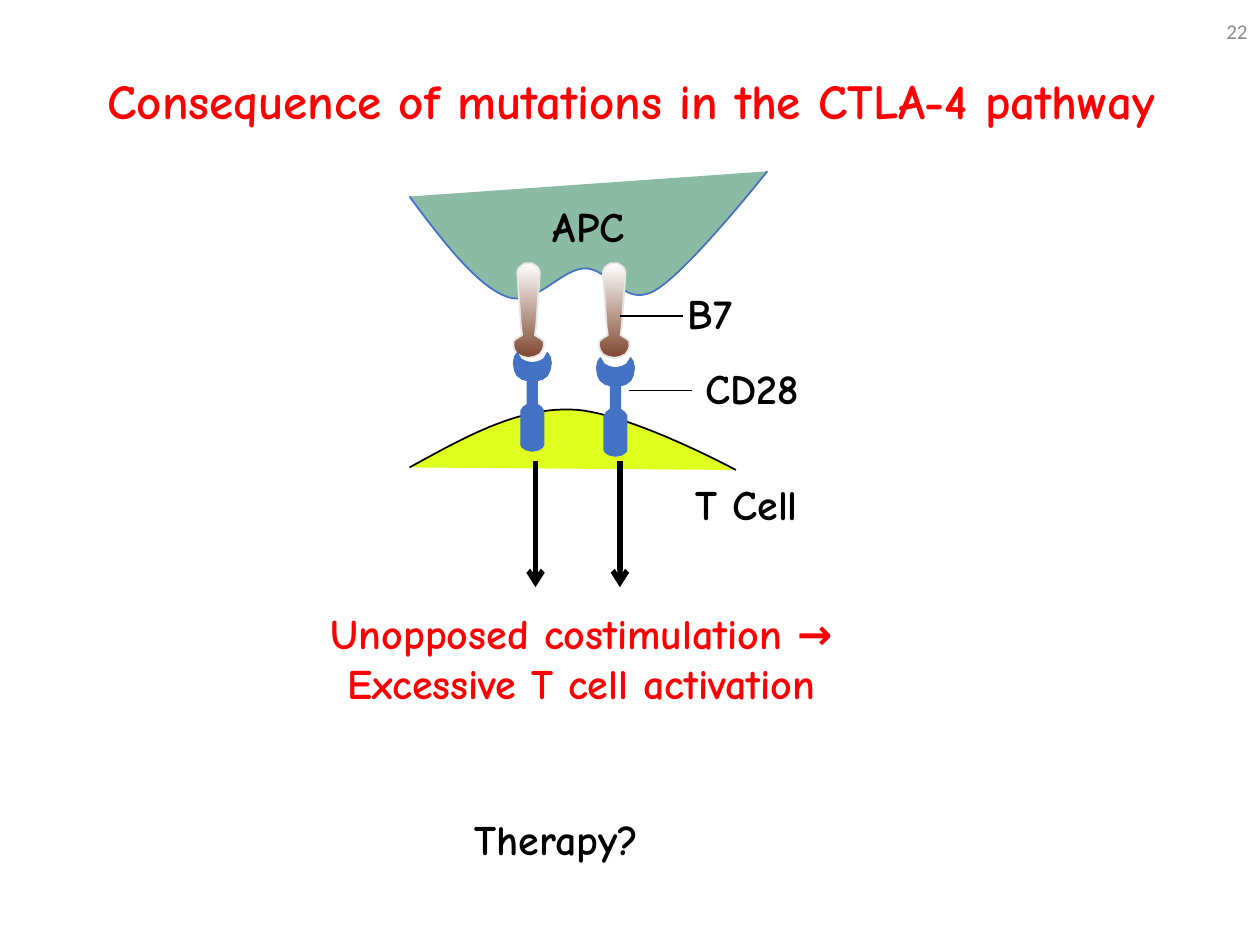
from dataclasses import dataclass

from lxml.etree import SubElement
from pptx import Presentation
from pptx.dml.color import RGBColor
from pptx.enum.shapes import MSO_CONNECTOR as Connector
from pptx.enum.text import MSO_ANCHOR as Anchor, MSO_AUTO_SIZE as AutoSize, PP_ALIGN as Align
from pptx.oxml.ns import qn
from pptx.util import Inches, Pt


@dataclass(frozen=True)
class Theme:
    font: str = "Comic Neue"
    number_font: str = "Calibri"
    title_size: int = 28
    body_size: int = 24
    number_size: int = 12
    ink: str = "000000"
    accent: str = "FF0000"
    muted: str = "8C8C8C"
    apc: str = "8BBBA5"
    t_cell: str = "DFFF1E"
    receptor: str = "4472C4"
    ligand_top: str = "FFFFFF"
    ligand_bottom: str = "7F4730"
    ligand_edge: str = "E7E6E6"


@dataclass(frozen=True)
class Box:
    left: float
    top: float
    width: float
    height: float

    def inside(self, left, top, width, height):
        return Box(self.left + left, self.top + top, width, height)

    def emu(self):
        return [Inches(n) for n in (self.left, self.top, self.width, self.height)]


THEME = Theme()
APC_START = (0, 0.2)
APC_CURVES = [
    ((0.26, 0.55), (0.53, 0.9), (0.76, 0.99)),
    ((0.99, 1.09), (1.19, 0.78), (1.39, 0.77)),
    ((1.59, 0.77), (1.7, 1.08), (1.94, 0.95)),
    ((2.19, 0.82), (2.84, 0), (2.84, 0)),
]
T_CELL_START = (0, 0.46)
T_CELL_CURVES = [
    ((0.42, 0.23), (0.84, -0.01), (1.27, 0)),
    ((1.7, 0), (2.59, 0.48), (2.59, 0.48)),
]
B7_PROFILE = [
    (0, 0.75), (0.05, 0.74), (0.09, 0.72), (0.11, 0.69), (0.12, 0.66), (0.12, 0.62),
    (0.1, 0.6), (0.05, 0.57), (0.06, 0.5), (0.09, 0.07), (0.08, 0.04), (0.06, 0.02),
    (0.03, 0), (0, 0),
]
CD28_PROFILE = [
    (0, 0.08), (0.05, 0.07), (0.09, 0.05), (0.12, 0), (0.14, 0.03), (0.15, 0.08),
    (0.14, 0.14), (0.12, 0.18), (0.08, 0.21), (0.04, 0.22), (0.04, 0.41), (0.07, 0.43),
    (0.09, 0.46), (0.09, 0.73), (0.08, 0.75), (0.05, 0.77), (0, 0.78),
]


def rgb(color):
    return RGBColor.from_string(color)


def write(slide, box, text, holder=None, font=THEME.font, size=THEME.body_size, color=THEME.ink,
          bold=True, align=Align.LEFT, anchor=Anchor.TOP, wrap=False):
    if holder is None:
        holder = slide.shapes.add_textbox(*box.emu())
    else:
        holder.left, holder.top, holder.width, holder.height = box.emu()
    frame = holder.text_frame
    frame.text = text
    frame.word_wrap = wrap
    frame.auto_size = AutoSize.NONE if wrap else AutoSize.SHAPE_TO_FIT_TEXT
    frame.vertical_anchor = anchor
    for paragraph in frame.paragraphs:
        paragraph.alignment = align
        for run in paragraph.runs:
            run.font.name = font
            run.font.size = Pt(size)
            run.font.bold = bold
            run.font.color.rgb = rgb(color)


def draw_line(slide, start, end, weight=1, arrow=False):
    line = slide.shapes.add_connector(Connector.STRAIGHT, *[Inches(n) for n in start + end])
    line.line.color.rgb = rgb(THEME.ink)
    line.line.width = Pt(weight)
    if arrow:
        SubElement(line.line._get_or_add_ln(), qn("a:tailEnd"), type="arrow")
    SubElement(line._element.spPr, qn("a:effectLst"))


def draw_outline(slide, box, points, edge, weight, close):
    corners = [(Inches(box.left + x), Inches(box.top + y)) for x, y in points]
    builder = slide.shapes.build_freeform(*corners[0])
    builder.add_line_segments(corners[1:], close=close)
    outline = builder.convert_to_shape()
    outline.shadow.inherit = False
    outline.line.color.rgb = rgb(edge)
    outline.line.width = Pt(weight)
    return outline


def curve_points(start, curves, steps=24):
    points = [start]
    for first, second, end in curves:
        corners = (points[-1], first, second, end)
        for step in range(1, steps + 1):
            t = step / steps
            weights = ((1 - t) ** 3, 3 * t * (1 - t) ** 2, 3 * t * t * (1 - t), t ** 3)
            points.append(tuple(sum(w * c[axis] for w, c in zip(weights, corners))
                                for axis in (0, 1)))
    return points


def mirrored(profile, center):
    right = [(center + x, y) for x, y in profile]
    left = [(center - x, y) for x, y in reversed(profile[1:-1])]
    return right + left


def add_cell(slide, box, start, curves, color, edge):
    membrane = draw_outline(slide, box, curve_points(start, curves), edge, 1, close=False)
    membrane.fill.solid()
    membrane.fill.fore_color.rgb = rgb(color)


def add_b7(slide, box):
    ligand = draw_outline(slide, box, mirrored(B7_PROFILE, box.width / 2),
                          THEME.ligand_edge, 1, close=True)
    ligand.fill.gradient()
    ligand.fill.gradient_angle = 270
    for stop, color in zip(ligand.fill.gradient_stops, (THEME.ligand_top, THEME.ligand_bottom)):
        stop.color.rgb = rgb(color)


def add_cd28(slide, box):
    receptor = draw_outline(slide, box, mirrored(CD28_PROFILE, box.width / 2),
                            THEME.receptor, 0.75, close=True)
    receptor.fill.solid()
    receptor.fill.fore_color.rgb = rgb(THEME.receptor)


def add_synapse(slide, box):
    x, y = box.left, box.top
    add_cell(slide, box.inside(0, 0, 2.84, 1.01), APC_START, APC_CURVES, THEME.apc, THEME.receptor)
    add_cell(slide, box.inside(0, 1.89, 2.59, 0.48), T_CELL_START, T_CELL_CURVES,
             THEME.t_cell, THEME.ink)
    for left in (0.82, 1.5):
        add_b7(slide, box.inside(left, 0.73, 0.25, 0.75))
    for left, top in ((0.82, 1.44), (1.48, 1.48)):
        add_cd28(slide, box.inside(left, top, 0.31, 0.78))
    for signal in (1, 1.67):
        draw_line(slide, (x + signal, y + 2.3), (x + signal, y + 3.3), weight=3, arrow=True)
    for left, top in ((1.67, 1.15), (1.74, 1.74)):
        draw_line(slide, (x + left, y + top), (x + left + 0.5, y + top))
    for label, left, top, width in (("APC", 1.04, 0.18, 0.84), ("B7", 2.11, 0.87, 0.62),
                                    ("CD28", 2.25, 1.47, 1.06), ("T Cell", 2.17, 2.39, 1.16)):
        write(slide, box.inside(left, top, width, 0.5), label)


def add_heading(slide, box):
    write(slide, box, "Consequence of mutations in the CTLA-4 pathway", holder=slide.shapes.title,
          size=THEME.title_size, color=THEME.accent, align=Align.CENTER)


def add_outcome(slide, box):
    write(slide, box.inside(0, 0, 4.75, 0.91),
          "Unopposed costimulation →\nExcessive T cell activation",
          color=THEME.accent, align=Align.CENTER)
    write(slide, box.inside(1.43, 1.64, 1.72, 0.5), "Therapy?")


def add_page_number(slide, box):
    write(slide, box, "22", font=THEME.number_font, size=THEME.number_size, color=THEME.muted,
          bold=False, align=Align.RIGHT, anchor=Anchor.MIDDLE, wrap=True)


def main():
    deck = Presentation()
    deck.slide_width, deck.slide_height = Inches(10), Inches(7.5)
    slide = deck.slides.add_slide(deck.slide_layouts[5])
    add_page_number(slide, Box(7.92, 0, 2.08, 0.5))
    add_heading(slide, Box(0.15, 0.51, 9.72, 0.57))
    add_synapse(slide, Box(3.25, 1.36, 3.31, 3.3))
    add_outcome(slide, Box(2.24, 4.77, 4.75, 2.14))
    deck.save("out.pptx")


if __name__ == "__main__":
    main()
